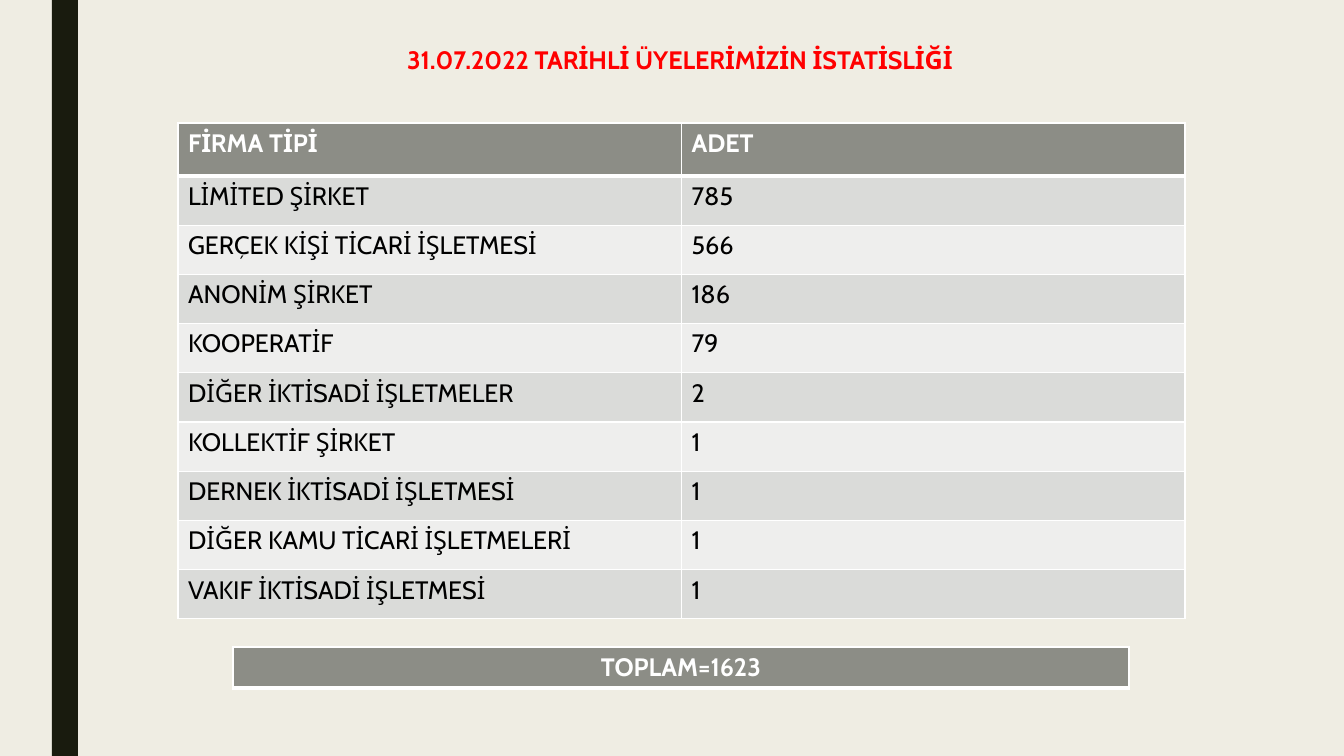
from lxml.etree import SubElement
from pptx import Presentation
from pptx.dml.color import RGBColor
from pptx.enum.shapes import MSO_SHAPE as Shape
from pptx.enum.text import MSO_AUTO_SIZE as AutoSize, PP_ALIGN as Align
from pptx.oxml.ns import qn
from pptx.util import Pt

PX = 914400 / 100.8
PAGE_W, PAGE_H = 1344, 756
FONT, SIZE = "Cabin", 18
THIN, THICK = 1, 3
COLORS = {
    "background": "EFEDE3",
    "stripe": "191B0E",
    "title": "FF0000",
    "header": "8C8D86",
    "odd": "DADBD9",
    "even": "EEEEED",
    "light": "FFFFFF",
    "dark": "000000",
}
MEMBERS = [
    ("LİMİTED ŞİRKET", "785"),
    ("GERÇEK KİŞİ TİCARİ İŞLETMESİ", "566"),
    ("ANONİM ŞİRKET", "186"),
    ("KOOPERATİF", "79"),
    ("DİĞER İKTİSADİ İŞLETMELER", "2"),
    ("KOLLEKTİF ŞİRKET", "1"),
    ("DERNEK İKTİSADİ İŞLETMESİ", "1"),
    ("DİĞER KAMU TİCARİ İŞLETMELERİ", "1"),
    ("VAKIF İKTİSADİ İŞLETMESİ", "1"),
]


def emu(px):
    return round(px * PX)


def color(name):
    return RGBColor.from_string(COLORS[name])


def paint(fill, name):
    fill.solid()
    fill.fore_color.rgb = color(name)


def write(frame, text, ink, bold, align):
    para = frame.paragraphs[0]
    para.alignment = align
    span = para.add_run()
    span.text = text
    span.font.name = FONT
    span.font.size = Pt(SIZE)
    span.font.bold = bold
    span.font.color.rgb = color(ink)


def add_borders(cell, top, bottom):
    """Draw the four white edges; must run before the cell is filled."""
    props = cell._tc.get_or_add_tcPr()
    for side, width in (("L", THIN), ("R", THIN), ("T", top), ("B", bottom)):
        line = SubElement(props, qn(f"a:ln{side}"), w=str(Pt(width)))
        fill = SubElement(line, qn("a:solidFill"))
        SubElement(fill, qn("a:srgbClr"), val=COLORS["light"])


def add_grid(page, box, rows, header_height, align=Align.LEFT):
    """Place a table with a dark first row and banded rows under it."""
    left, top, width, height = map(emu, box)
    column_count = len(rows[0])
    table = page.shapes.add_table(
        len(rows), column_count, left, top, width, height).table
    for column in table.columns:
        column.width = width // column_count
    for r, texts in enumerate(rows):
        is_header = r == 0
        if is_header:
            table.rows[r].height = emu(header_height)
            band = "header"
        else:
            table.rows[r].height = (height - emu(header_height)) // (len(rows) - 1)
            band = "odd" if r % 2 else "even"
        for c, text in enumerate(texts):
            cell = table.cell(r, c)
            add_borders(cell, THICK if r == 1 else THIN,
                        THICK if is_header else THIN)
            paint(cell.fill, band)
            write(cell.text_frame, text, "light" if is_header else "dark",
                  is_header, align)


def add_stripe(page, box):
    stripe = page.shapes.add_shape(Shape.RECTANGLE, *map(emu, box))
    stripe.shadow.inherit = False
    paint(stripe.fill, "stripe")
    stripe.line.fill.background()


def add_title(page, box):
    frame = page.shapes.add_textbox(*map(emu, box)).text_frame
    frame.word_wrap = True
    frame.auto_size = AutoSize.SHAPE_TO_FIT_TEXT
    write(frame, "31.07.2022 TARİHLİ ÜYELERİMİZİN İSTATİSLİĞİ", "title",
          True, Align.CENTER)


def main():
    deck = Presentation()
    deck.slide_width, deck.slide_height = emu(PAGE_W), emu(PAGE_H)
    page = deck.slides.add_slide(deck.slide_layouts[6])
    paint(page.background.fill, "background")
    add_stripe(page, (52, 0, 26, PAGE_H))
    add_title(page, (151, 39, 1058, 40))
    add_grid(page, (178, 123, 1007, 496), [("FİRMA TİPİ", "ADET"), *MEMBERS], 53)
    add_grid(page, (233, 647, 896, 41), [("TOPLAM=1623",)], 41, Align.CENTER)
    deck.save("out.pptx")


if __name__ == "__main__":
    main()
